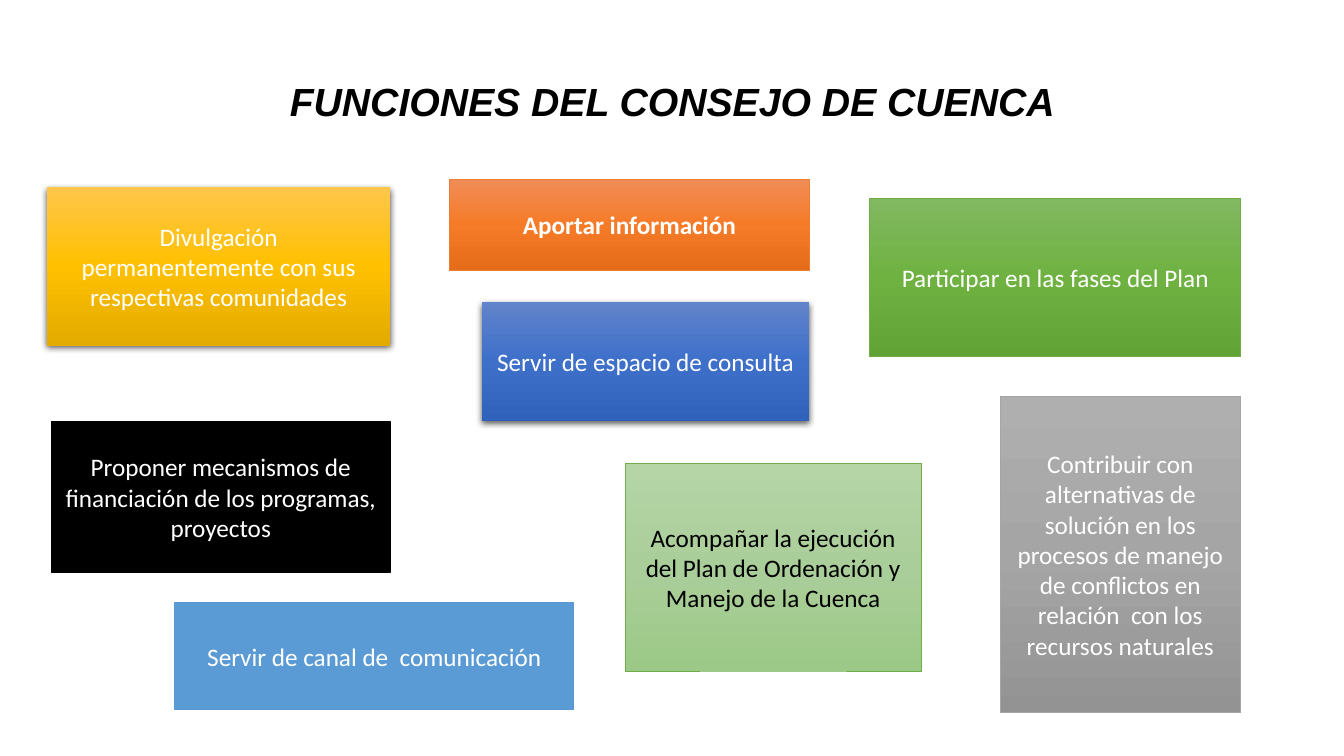
from copy import deepcopy
from dataclasses import dataclass

from lxml.etree import SubElement
from pptx import Presentation
from pptx.dml.color import RGBColor
from pptx.enum.shapes import MSO_SHAPE
from pptx.enum.text import MSO_ANCHOR, MSO_AUTO_SIZE, PP_ALIGN
from pptx.oxml.ns import qn
from pptx.util import Cm, Pt


@dataclass(frozen=True)
class Theme:
    title_font: str = "Arial"
    body_font: str = "Calibri"
    title_size: int = 28
    body_size: int = 18
    dark: str = "000000"
    light: str = "FFFFFF"
    blue: tuple = ("5B9BD5",)
    black: tuple = ("000000",)
    orange: tuple = ("F18C57", "F67B28", "E56C19")
    green: tuple = ("81B861", "6FB242", "62A336")
    royal: tuple = ("6183CB", "3E70CA", "3062BB")
    gold: tuple = ("FFC64B", "FFC000", "E3AB00")
    pale_green: tuple = ("B5D5A7", "AACE9A", "9CC987")
    gray: tuple = ("AFAFAF", "A5A5A5", "939393")
    orange_line: str = "ED7D31"
    green_line: str = "70AD47"
    gray_line: str = "A5A5A5"


T = Theme()

# Each card: text, box in cm (left, top, width, height), fill, format
CARDS = [
    ("Aportar información", (11.33, 4.52, 9.07, 2.29), T.orange,
     dict(line=(T.orange_line, 0.5), bold=True)),
    ("Participar en las fases del Plan", (21.92, 5.0, 9.35, 3.99), T.green,
     dict(line=(T.green_line, 0.5))),
    ("Servir de espacio de consulta", (12.14, 7.62, 8.26, 3.0), T.royal,
     dict(shadow=True)),
    ("Servir de canal de  comunicación", (4.37, 15.14, 10.13, 2.79), T.blue,
     dict(line=(T.light, 1.5))),
    ("Divulgación\npermanentemente con sus respectivas comunidades",
     (1.19, 4.72, 8.64, 3.99), T.gold, dict(shadow=True)),
    ("Proponer mecanismos de financiación de los programas, proyectos",
     (1.3, 10.62, 8.53, 3.81), T.black, dict(line=(T.dark, 1))),
    ("Acompañar la ejecución del Plan de Ordenación y Manejo de la Cuenca",
     (15.75, 11.68, 7.47, 5.23), T.pale_green,
     dict(line=(T.green_line, 0.5), color=T.dark)),
    ("Contribuir con alternativas de solución en los procesos de manejo de "
     "conflictos en relación  con los recursos naturales",
     (25.2, 9.98, 6.07, 7.98), T.gray, dict(line=(T.gray_line, 0.5))),
]


def write(tf, text, font=T.body_font, size=T.body_size, color=T.light,
          bold=False, italic=False, anchor=MSO_ANCHOR.MIDDLE, spacing=None):
    tf.word_wrap = True
    tf.auto_size = MSO_AUTO_SIZE.NONE
    tf.vertical_anchor = anchor
    for i, line in enumerate(text.split("\n")):
        p = tf.add_paragraph() if i else tf.paragraphs[0]
        p.alignment = PP_ALIGN.CENTER
        p.line_spacing = spacing
        r = p.add_run()
        r.text = line
        r.font.name, r.font.size = font, Pt(size)
        r.font.bold, r.font.italic = bold, italic
        r.font.color.rgb = RGBColor.from_string(color)


def paint(sp, colors):
    """One colour gives a solid fill, three a top-to-bottom gradient."""
    fill = sp.fill
    if len(colors) == 1:
        fill.solid()
        fill.fore_color.rgb = RGBColor.from_string(colors[0])
        return
    fill.gradient()
    fill.gradient_angle = 270
    stops = sp._element.spPr.find(".//" + qn("a:gsLst"))
    stops.insert(1, deepcopy(stops[0]))
    for stop, color, position in zip(fill.gradient_stops, colors, (0, 0.5, 1)):
        stop.color.rgb = RGBColor.from_string(color)
        stop.position = position


def add_shadow(sp):
    effects = sp._element.spPr.find(qn("a:effectLst"))
    outer = SubElement(effects, qn("a:outerShdw"), blurRad=str(Pt(4.5)),
                       dist=str(Pt(1.5)), dir="5400000", algn="ctr",
                       rotWithShape="0")
    color = SubElement(outer, qn("a:srgbClr"), val=T.dark)
    SubElement(color, qn("a:alpha"), val="63000")


def add_title(s, text, box):
    sp = s.shapes.title
    sp.left, sp.top, sp.width, sp.height = map(Cm, box)
    write(sp.text_frame, text, font=T.title_font, size=T.title_size,
          color=T.dark, bold=True, italic=True, anchor=MSO_ANCHOR.TOP,
          spacing=0.9)


def add_card(s, text, box, colors, line=None, shadow=False, **fmt):
    sp = s.shapes.add_shape(MSO_SHAPE.RECTANGLE, *map(Cm, box))
    paint(sp, colors)
    if line:
        color, width = line
        sp.line.color.rgb = RGBColor.from_string(color)
        sp.line.width = Pt(width)
    else:
        sp.line.fill.background()
    sp.shadow.inherit = False
    if shadow:
        add_shadow(sp)
    write(sp.text_frame, text, **fmt)


def main():
    prs = Presentation()
    prs.slide_width, prs.slide_height = Cm(33.87), Cm(19.05)
    s = prs.slides.add_slide(prs.slide_layouts[5])

    # Heading
    add_title(s, "FUNCIONES DEL CONSEJO DE CUENCA", (1.7, 1.96, 30.48, 1.96))

    # Council functions
    for text, box, colors, fmt in CARDS:
        add_card(s, text, box, colors, **fmt)

    prs.save("out.pptx")


if __name__ == "__main__":
    main()
